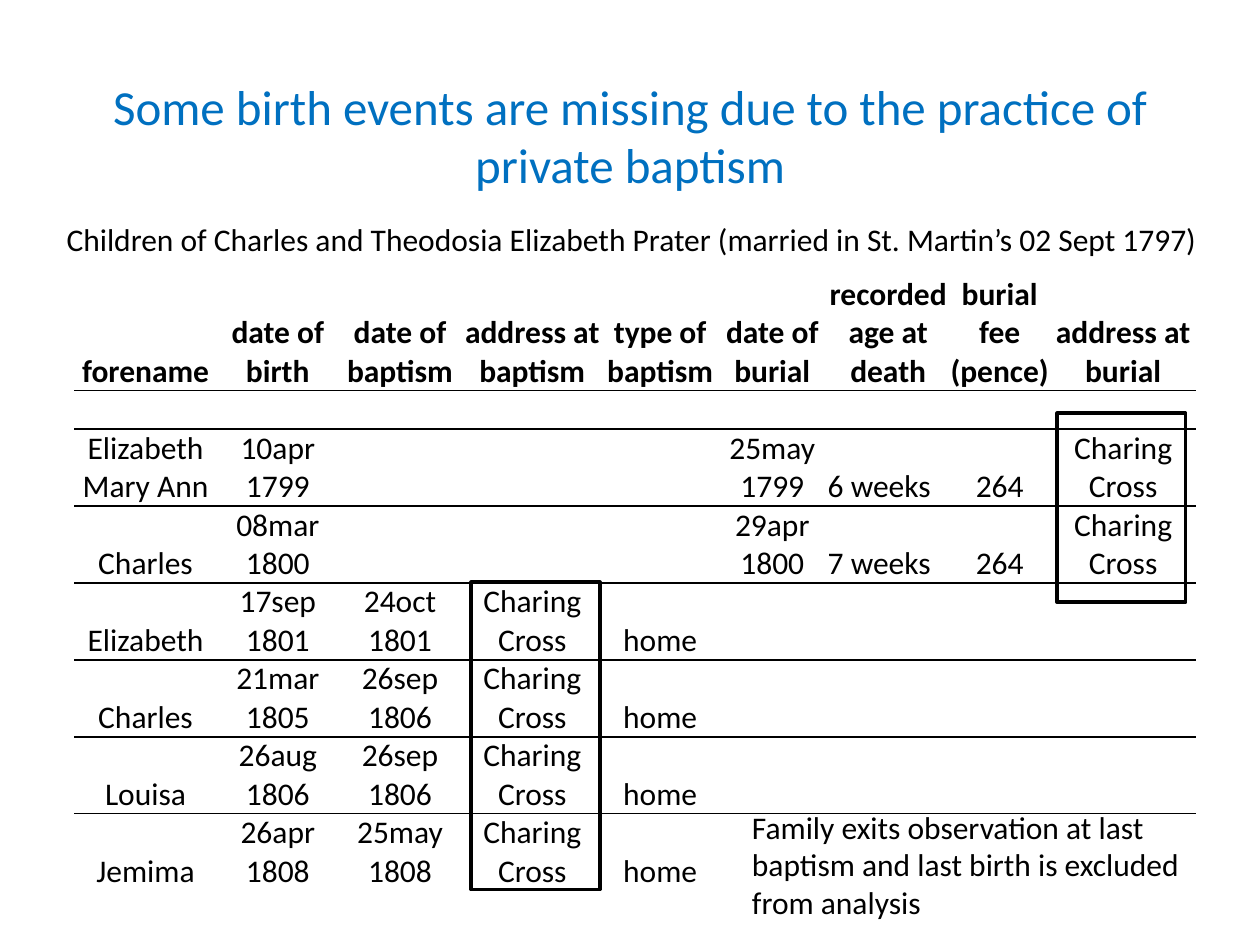
from dataclasses import dataclass

from lxml.etree import SubElement
from pptx import Presentation
from pptx.dml.color import RGBColor
from pptx.enum.shapes import MSO_SHAPE
from pptx.enum.text import MSO_ANCHOR, PP_ALIGN
from pptx.oxml import parse_xml
from pptx.oxml.ns import nsdecls, qn
from pptx.util import Inches, Pt


@dataclass(frozen=True)
class Theme:
    font: str = "Calibri"
    title_color: RGBColor = RGBColor(0x00, 0x70, 0xC0)
    ink: RGBColor = RGBColor(0, 0, 0)
    paper: RGBColor = RGBColor(0xFF, 0xFF, 0xFF)
    title_size: int = 28
    body_size: int = 18
    rule_width: int = 1
    frame_width: int = 2


COLUMN_WIDTHS = [1.13, 0.97, 0.97, 1.13, 0.9, 0.88, 0.96, 0.81, 1.15]
HEADER_HEIGHT, SPACER_HEIGHT, CHILD_HEIGHT = 0.92, 0.3, 0.6
AGE_COLUMN = 6

HEADERS = [
    "forename", "date of birth", "date of baptism", "address at baptism",
    "type of baptism", "date of burial", "recorded age at death",
    "burial fee (pence)", "address at burial",
]
HOME = "Charing Cross"


def buried(name, birth, burial, age):
    return [name, birth, "", "", "", burial, age, "264", HOME]


def baptised(name, birth, baptism):
    return [name, birth, baptism, HOME, "home", "", "", "", ""]


CHILDREN = [
    buried("Elizabeth Mary Ann", "10apr\n1799", "25may\n1799", "6 weeks"),
    buried("Charles", "08mar\n1800", "29apr\n1800", "7 weeks"),
    baptised("Elizabeth", "17sep\n1801", "24oct\n1801"),
    baptised("Charles", "21mar\n1805", "26sep\n1806"),
    baptised("Louisa", "26aug\n1806", "26sep\n1806"),
    baptised("Jemima", "26apr\n1808", "25may\n1808"),
]


class SlideBuilder:
    def __init__(self, page, theme):
        self.page = page
        self.theme = theme

    def fill_text(self, frame, text, size=None, color=None, bold=False, align=PP_ALIGN.LEFT):
        frame.text = text
        for paragraph in frame.paragraphs:
            paragraph.alignment = align
            paragraph.font.name = self.theme.font
            paragraph.font.size = Pt(size or self.theme.body_size)
            paragraph.font.color.rgb = color or self.theme.ink
            paragraph.font.bold = bold

    def title(self, text, left, top, width, height):
        box = self.page.shapes.title
        box.left, box.top = Inches(left), Inches(top)
        box.width, box.height = Inches(width), Inches(height)
        box.text_frame.vertical_anchor = MSO_ANCHOR.MIDDLE
        self.fill_text(box.text_frame, text, self.theme.title_size,
                       self.theme.title_color, align=PP_ALIGN.CENTER)

    def text(self, text, left, top, width, height, wrap=True):
        box = self.page.shapes.add_textbox(
            Inches(left), Inches(top), Inches(width), Inches(height))
        box.text_frame.word_wrap = wrap
        self.fill_text(box.text_frame, text)

    def frame(self, left, top, width, height):
        box = self.page.shapes.add_shape(
            MSO_SHAPE.RECTANGLE, Inches(left), Inches(top), Inches(width), Inches(height))
        box.shadow.inherit = False
        box.fill.solid()
        box.fill.fore_color.rgb = self.theme.paper
        box.line.color.rgb = self.theme.ink
        box.line.width = Pt(self.theme.frame_width)

    def borders(self, cell, ruled_sides):
        """Rule the named sides (T, B) of a cell and clear the others."""
        properties = cell._tc.get_or_add_tcPr()
        for position, side in enumerate("LRTB"):
            line = parse_xml(f'<a:ln{side} {nsdecls("a")}/>')
            if side in ruled_sides:
                line.set("w", str(Pt(self.theme.rule_width)))
                fill = SubElement(line, qn("a:solidFill"))
                SubElement(fill, qn("a:srgbClr")).set("val", str(self.theme.ink))
            else:
                line.set("w", "0")
                SubElement(line, qn("a:noFill"))
            properties.insert(position, line)

    def table(self, rows, left, top, widths, heights):
        table = self.page.shapes.add_table(
            len(rows), len(widths), Inches(left), Inches(top),
            Inches(sum(widths)), Inches(sum(heights))).table
        table.horz_banding = False
        for column, width in zip(table.columns, widths):
            column.width = Inches(width)
        for row, height in zip(table.rows, heights):
            row.height = Inches(height)
        for row_index, values in enumerate(rows):
            is_header = row_index == 0
            ruled_sides = ("" if is_header else "T") + ("B" if row_index < len(rows) - 1 else "")
            for column_index, value in enumerate(values):
                cell = table.cell(row_index, column_index)
                cell.margin_left = cell.margin_right = 0
                cell.margin_top = cell.margin_bottom = 0
                cell.vertical_anchor = MSO_ANCHOR.BOTTOM
                cell.fill.background()
                centred = is_header or column_index != AGE_COLUMN
                self.fill_text(cell.text_frame, value, bold=is_header,
                               align=PP_ALIGN.CENTER if centred else PP_ALIGN.LEFT)
                self.borders(cell, ruled_sides)


def main():
    deck = Presentation()
    deck.slide_width, deck.slide_height = Inches(10), Inches(7.5)
    page = deck.slides.add_slide(deck.slide_layouts[5])
    builder = SlideBuilder(page, Theme())

    builder.frame(3.74, 4.62, 1.02, 2.44)
    builder.frame(8.39, 3.28, 1.02, 1.5)
    builder.table(
        [HEADERS, [""] * len(HEADERS), *CHILDREN], 0.59, 2.18, COLUMN_WIDTHS,
        [HEADER_HEIGHT, SPACER_HEIGHT] + [CHILD_HEIGHT] * len(CHILDREN))
    builder.title("Some birth events are missing due to the practice of private baptism",
                  0.59, 0.39, 8.82, 1.36)
    builder.text("Children of Charles and Theodosia Elizabeth Prater "
                 "(married in St. Martin’s 02 Sept 1797)", 0.43, 1.7, 9.26, 0.4, wrap=False)
    builder.text("Family exits observation at last baptism and last birth "
                 "is excluded from analysis", 5.87, 6.36, 3.66, 1.01)
    deck.save("out.pptx")


if __name__ == "__main__":
    main()
